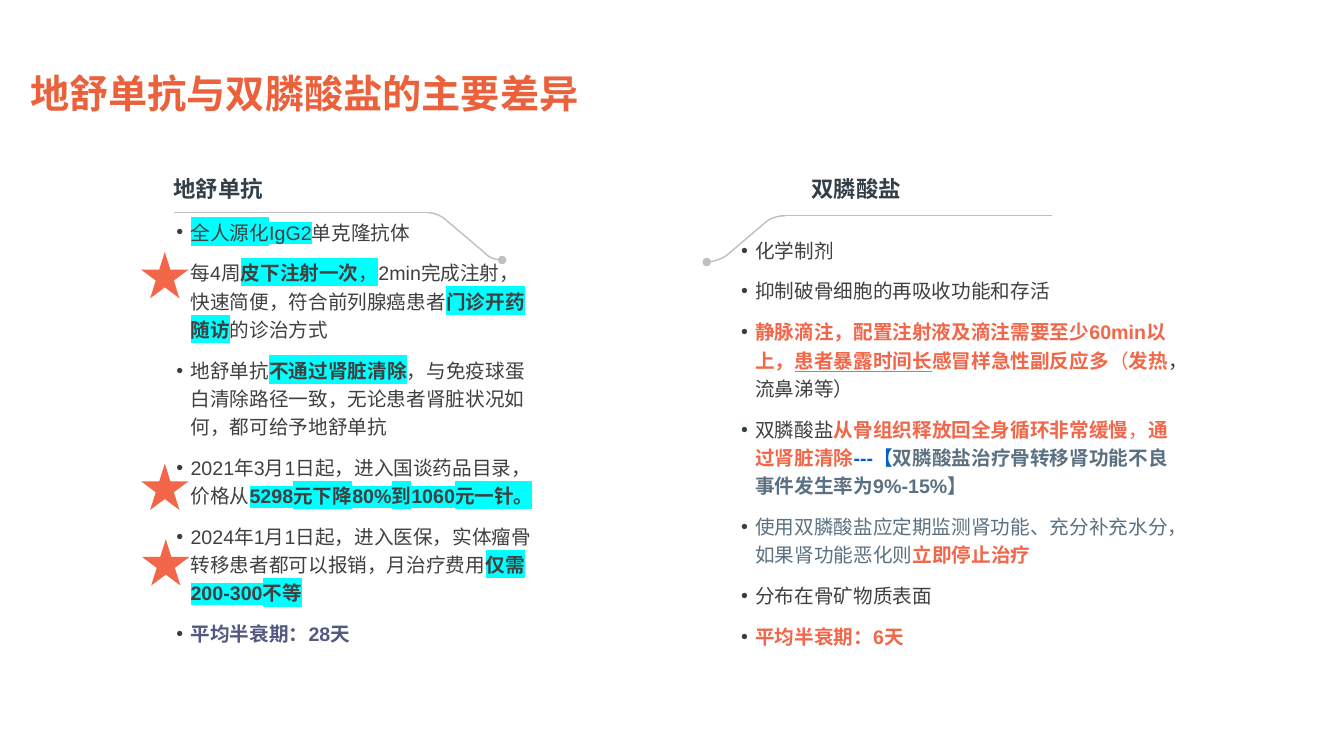
from dataclasses import dataclass
from typing import Optional

import pptx
import pptx.dml.color
import pptx.enum.lang
import pptx.enum.shapes
import pptx.enum.text
import pptx.oxml
import pptx.oxml.ns
import pptx.util
from pptx.dml.color import RGBColor
from pptx.util import Inches, Pt

TITLE = RGBColor(0xEB, 0x61, 0x3B)
ORANGE = RGBColor(0xF2, 0x66, 0x49)
DARK = RGBColor(0x33, 0x3F, 0x48)
TEXT = RGBColor(0x40, 0x40, 0x40)
PURPLE = RGBColor(0x53, 0x59, 0x83)
BLUE = RGBColor(0x00, 0x63, 0xC3)
SLATE = RGBColor(0x5B, 0x71, 0x81)
GREY = RGBColor(0xBF, 0xBF, 0xBF)
CYAN = RGBColor(0x00, 0xFF, 0xFF)
CJK_FONT = "Noto Sans CJK SC"
ANCHOR = pptx.enum.text.MSO_ANCHOR
AUTO_SIZE = pptx.enum.text.MSO_AUTO_SIZE


@dataclass(frozen=True)
class Run:
    text: str
    color: RGBColor = TEXT
    bold: bool = False
    highlight: Optional[RGBColor] = None
    underline: bool = False


@dataclass(frozen=True)
class Column:
    heading: str
    heading_box: tuple
    list_box: tuple
    items: list
    rule: tuple  # x start, x end, y
    curve: list  # start point, then three points for each Bezier segment


def key(text: str) -> Run:
    return Run(text, bold=True, highlight=CYAN)


def warn(text: str, **fmt) -> Run:
    return Run(text, ORANGE, **{"bold": True, **fmt})


COLUMNS = [
    Column(
        "地舒单抗", (1.65, 1.59, 2.62, 0.45), (1.65, 2.09, 3.73, 4.4),
        [
            [Run("全人源化IgG2", highlight=CYAN), Run("单克隆抗体")],
            [Run("每4周"), key("皮下注射一次"), Run("，", highlight=CYAN),
             Run("2min完成注射，快速简便，符合前列腺癌患者"),
             key("门诊开药随访"), Run("的诊治方式")],
            [Run("地舒单抗"), key("不通过肾脏清除"),
             Run("，与免疫球蛋白清除路径一致，无论患者肾脏状况如何，都可给予地舒单抗")],
            [Run("2021年3月1日起，进入国谈药品目录，价格从"),
             key("5298元下降80%到1060元一针。")],
            [Run("2024年1月1日起，进入医保，实体瘤骨转移患者都可以报销，月治疗费用"),
             key("仅需200-300不等")],
            [Run("平均半衰期：28天", PURPLE, bold=True)],
        ],
        (4.26, 1.73, 2.11),
        [(4.25, 2.11), (4.3, 2.11), (4.38, 2.14), (4.42, 2.18), (4.81, 2.51),
         (4.81, 2.51), (4.81, 2.51), (4.84, 2.55), (4.92, 2.58), (4.98, 2.58)],
    ),
    Column(
        "双膦酸盐", (7.98, 1.59, 2.78, 0.45), (7.25, 2.27, 4.57, 4.56),
        [
            [Run("化学制剂")],
            [Run("抑制破骨细胞的再吸收功能和存活")],
            [warn("静脉滴注，配置注射液及滴注需要至少60min以上，"),
             warn("患者暴露时间长", underline=True), warn("感冒样急性副反应多"),
             warn("（", bold=False), warn("发热"), Run("，流鼻涕等）")],
            [Run("双膦酸盐"), warn("从骨组织释放回全身循环非常缓慢"),
             warn("，", bold=False), warn("通过肾脏清除"),
             Run("---【", BLUE, bold=True),
             Run("双膦酸盐治疗骨转移肾功能不良事件发生率为9%-15%】", SLATE, bold=True)],
            [Run("使用双膦酸盐应定期监测肾功能、充分补充水分，如果肾功能恶化则", SLATE),
             warn("立即停止治疗")],
            [Run("分布在骨矿物质表面")],
            [warn("平均半衰期：6天")],
        ],
        (7.74, 10.43, 2.14),
        [(7.79, 2.14), (7.73, 2.14), (7.64, 2.16), (7.6, 2.2), (7.2, 2.54),
         (7.2, 2.54), (7.2, 2.54), (7.15, 2.57), (7.07, 2.6), (7.01, 2.6)],
    ),
]
STARS = [(1.4, 2.5), (1.4, 4.6), (1.41, 5.35)]


def element(xml: str):
    tag, rest = xml.split(" ", 1)
    return pptx.oxml.parse_xml(f"<a:{tag} {pptx.oxml.ns.nsdecls('a')} {rest}")


def add_text(p, text: str, *, size: float, font: str, color: RGBColor,
             bold: bool = False, highlight: Optional[RGBColor] = None,
             underline: bool = False) -> None:
    r = p.add_run()
    r.text = text
    f = r.font
    f.size, f.bold, f.underline = Pt(size), bold, underline
    f.language_id = pptx.enum.lang.MSO_LANGUAGE_ID.SIMPLIFIED_CHINESE
    f.color.rgb = color
    f.name = font
    latin = r._r.rPr.find(pptx.oxml.ns.qn("a:latin"))
    latin.addnext(element(f'ea typeface="{CJK_FONT}"/>'))
    if highlight is not None:
        latin.addprevious(element(f'highlight ><a:srgbClr val="{highlight}"/></a:highlight>'))


def place(sp, box: tuple, anchor, auto_size, inset: tuple = (0.1, 0.05)):
    sp.left, sp.top, sp.width, sp.height = map(Inches, box)
    tf = sp.text_frame
    tf.word_wrap, tf.auto_size, tf.vertical_anchor = True, auto_size, anchor
    tf.margin_left = tf.margin_right = Inches(inset[0])
    tf.margin_top = tf.margin_bottom = Inches(inset[1])
    return tf


def format_paragraph(p, line: float, before: float = 0, after: float = 0) -> None:
    p.alignment = pptx.enum.text.PP_ALIGN.LEFT
    p.line_spacing, p.space_before, p.space_after = line, Pt(before), Pt(after)


def fill_list(tf, items: list) -> None:
    for i, runs in enumerate(items):
        p = tf.paragraphs[0] if i == 0 else tf.add_paragraph()
        format_paragraph(p, 1.2, 4.5 if i else 0, 4.5)
        pPr = p._p.get_or_add_pPr()
        pPr.set("marL", str(Inches(0.14)))
        pPr.set("indent", str(-Inches(0.14)))
        pPr.append(element(f'buClr ><a:srgbClr val="{DARK}"/></a:buClr>'))
        pPr.append(element('buFont typeface="Arial"/>'))
        pPr.append(element('buChar char="•"/>'))
        for run in runs:
            add_text(p, run.text, size=14, font="Arial", color=run.color, bold=run.bold,
                     highlight=run.highlight, underline=run.underline)


def style_line(sp) -> None:
    sp.line.color.rgb = GREY
    sp.line.width = Pt(1)


def add_curve(s, points: list) -> None:
    scaled = [(Inches(x), Inches(y)) for x, y in points]
    builder = s.shapes.build_freeform(*scaled[0])
    builder.add_line_segments(scaled[1:], close=False)
    sp = builder.convert_to_shape()
    sp.shadow.inherit = False
    sp.fill.background()
    style_line(sp)
    sp.line._get_or_add_ln().append(element('tailEnd type="oval"/>'))
    # Turn every three straight segments into one Bezier segment
    segments = list(sp._element.iter(pptx.oxml.ns.qn("a:lnTo")))
    for i in range(0, len(segments), 3):
        bezier = element("cubicBezTo />")
        segments[i].addprevious(bezier)
        for segment in segments[i:i + 3]:
            bezier.append(segment[0])
            segment.getparent().remove(segment)


def add_rule(s, x1: float, x2: float, y: float) -> None:
    c = s.shapes.add_connector(pptx.enum.shapes.MSO_CONNECTOR.STRAIGHT,
                               Inches(x1), Inches(y), Inches(x2), Inches(y))
    style_line(c)
    c._element.spPr.append(element("effectLst />"))


def add_star(s, x: float, y: float) -> None:
    sp = s.shapes.add_shape(pptx.enum.shapes.MSO_SHAPE.STAR_5_POINT,
                            Inches(x), Inches(y), Inches(0.47), Inches(0.46))
    sp.shadow.inherit = False
    sp.fill.solid()
    sp.fill.fore_color.rgb = ORANGE
    sp.line.fill.background()


def main() -> None:
    prs = pptx.Presentation()
    prs.slide_width, prs.slide_height = Inches(13.33), Inches(7.5)
    s = prs.slides.add_slide(prs.slide_layouts.get_by_name("Comparison"))
    title, *bodies = list(s.placeholders)[:5]

    # Title
    tf = place(title, (0.2, 0.54, 12, 0.77), ANCHOR.MIDDLE, AUTO_SIZE.NONE)
    format_paragraph(tf.paragraphs[0], 1.0)
    add_text(tf.paragraphs[0], "地舒单抗与双膦酸盐的主要差异", size=28, font=CJK_FONT,
             color=TITLE, bold=True)

    # Two columns: heading, list and callout line
    for column, heading, body in zip(COLUMNS, bodies[::2], bodies[1::2]):
        tf = place(heading, column.heading_box, ANCHOR.BOTTOM, AUTO_SIZE.NONE, (0.07, 0.04))
        format_paragraph(tf.paragraphs[0], 1.2)
        add_text(tf.paragraphs[0], column.heading, size=16, font="DejaVu Sans",
                 color=DARK, bold=True)
        fill_list(place(body, column.list_box, ANCHOR.TOP, AUTO_SIZE.SHAPE_TO_FIT_TEXT),
                  column.items)
        add_curve(s, column.curve)
        add_rule(s, *column.rule)

    # Stars beside the key points
    for x, y in STARS:
        add_star(s, x, y)

    prs.save("out.pptx")


if __name__ == "__main__":
    main()
